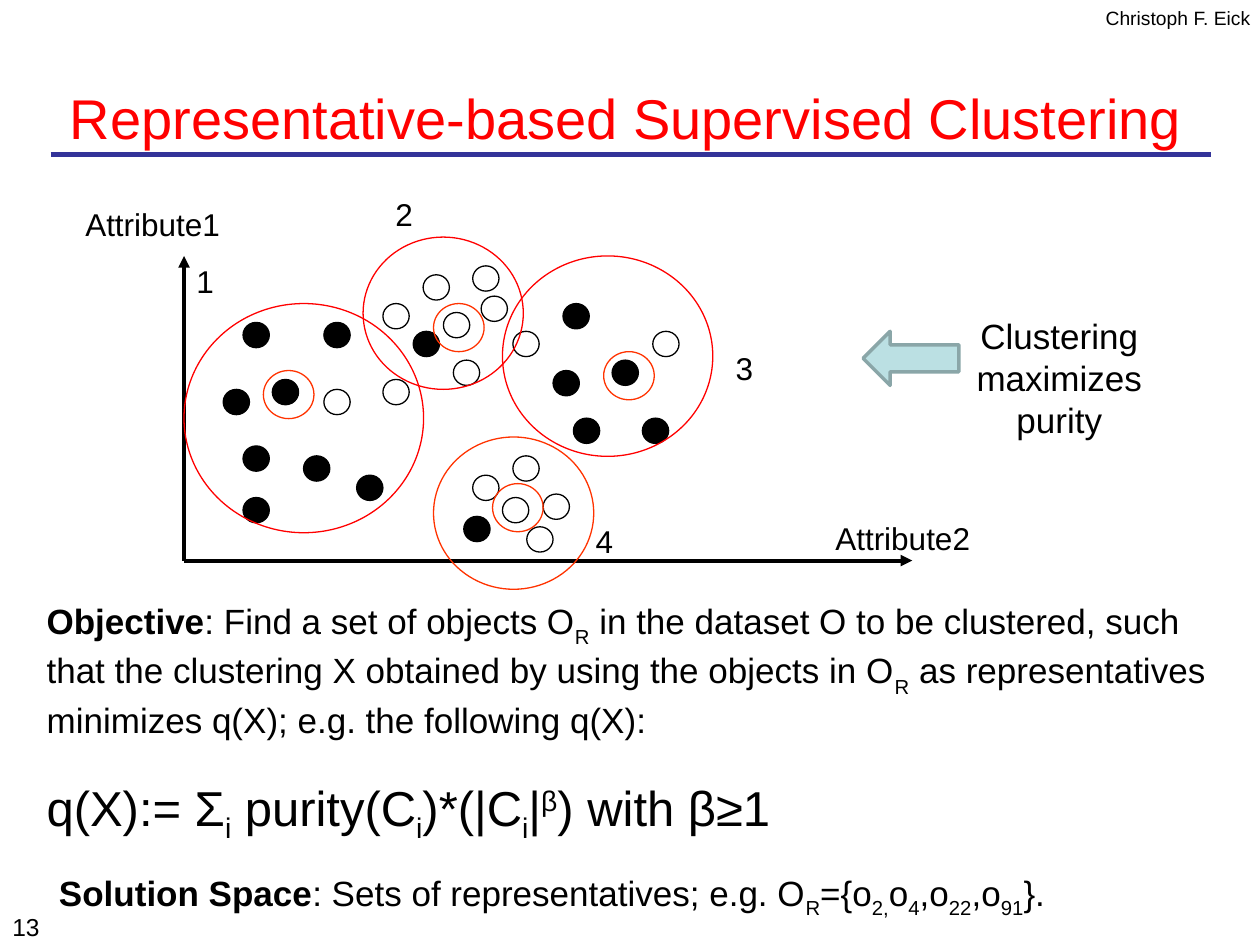
from pptx import Presentation
from pptx.dml.color import RGBColor
from pptx.enum.shapes import MSO_CONNECTOR as Connector, MSO_SHAPE as Shape
from pptx.enum.text import MSO_ANCHOR as Anchor, MSO_AUTO_SIZE as AutoSize, PP_ALIGN as Align
from pptx.oxml.ns import qn
from pptx.util import Cm, Pt
from lxml.etree import SubElement

FONT = "Arial"
BLACK, RED, ORANGE = "000000", "FF0000", "FF3300"
SUB, SUP = -25, 30
DOT_SIZE = (0.53, 0.51)
RING_SIZE = (1.02, 0.97)

# Left and top of every data object, in centimetres, by fill
DOTS = {
    BLACK: [(4.9, 6.5), (5.49, 7.65), (4.9, 8.99), (6.53, 6.5), (6.12, 9.19),
            (11.56, 8.43), (12.34, 7.26), (11.15, 7.47), (12.95, 8.43),
            (11.35, 6.12), (8.33, 6.68), (7.19, 9.58), (4.9, 10.03),
            (4.5, 7.85), (9.35, 10.41)],
    None: [(7.72, 7.65), (6.53, 7.85), (10.34, 6.68), (10.34, 9.19),
           (13.16, 6.68), (8.53, 5.54), (8.94, 6.3), (9.53, 5.36),
           (9.14, 7.26), (9.53, 9.58), (9.7, 5.97), (10.95, 9.96),
           (7.72, 6.12), (10.62, 10.62)],
    "FFFFFF": [(10.13, 10.03)],
}
CLUSTERS = [(10.13, 5.16, 4.24, 4.04, RED), (3.71, 6.12, 4.83, 4.62, RED),
            (7.32, 4.78, 3.23, 3.07, RED), (8.74, 8.81, 3.23, 3.07, ORANGE)]
REPRESENTATIVES = [(9.93, 9.75), (5.31, 7.47), (8.74, 6.12), (12.17, 7.09)]
LABELS = [("Attribute2", 16.59, 10.34), ("Attribute1", 1.47, 4.01),
          ("1", 3.71, 5.16), ("2", 7.72, 3.81), ("3", 14.58, 6.91), ("4", 11.76, 10.39)]

# Each span is its text and its baseline shift in percent
OBJECTIVE = [(": Find a set of objects O", 0), ("R", -30),
             (" in the dataset O to be clustered, such that the clustering X"
              " obtained by using the objects in O", 0), ("R", -30),
             (" as representatives minimizes q(X); e.g. the following q(X):", 0)]
FORMULA = [("q(X):= Σ", 0), ("i", SUB), (" purity(C", 0), ("i", SUB), (")*(|C", 0),
           ("i", SUB), ("|", 0), ("β", SUP), (") with β≥1", 0)]
SOLUTION = [(": Sets of representatives; e.g. O", 0), ("R", SUB), ("={o", 0),
            ("2,", SUB), ("o", 0), ("4", SUB), (",o", 0), ("22", SUB), (",o", 0),
            ("91", SUB), ("}.", 0)]


def color(value):
    return RGBColor.from_string(value)


def style_font(font, size, value=BLACK):
    font.name, font.size = FONT, Pt(size)
    font.color.rgb = color(value)


def add_box(slide, left, top, width, height, wrap=True):
    box = slide.shapes.add_textbox(Cm(left), Cm(top), Cm(width), Cm(height))
    box.text_frame.word_wrap = wrap
    box.text_frame.auto_size = AutoSize.SHAPE_TO_FIT_TEXT
    return box.text_frame


def add_text(slide, text, bounds, size, align=Align.LEFT, wrap=True):
    frame = add_box(slide, *bounds, wrap)
    frame.text = text
    for para in frame.paragraphs:
        para.alignment = align
        for run in para.runs:
            style_font(run.font, size)


def fill_spans(para, spans, size, heading=None):
    """Write spans with raised or lowered baselines after an optional bold heading."""
    if heading:
        run = para.add_run()
        run.text = heading
        style_font(run.font, size)
        run.font.bold = True
    for text, baseline in spans:
        run = para.add_run()
        run.text = text
        style_font(run.font, size)
        if baseline:
            run.font._element.set("baseline", str(baseline * 1000))


def add_figure(slide, kind, bounds, line, fill=None, width=0.75):
    figure = slide.shapes.add_shape(kind, *map(Cm, bounds))
    figure.shadow.inherit = False
    if fill:
        figure.fill.solid()
        figure.fill.fore_color.rgb = color(fill)
    else:
        figure.fill.background()
    figure.line.color.rgb = color(line)
    figure.line.width = Pt(width)


def add_line(slide, start, end, value, width, arrow=False):
    line = slide.shapes.add_connector(Connector.STRAIGHT, *map(Cm, start + end))
    line.line.color.rgb = color(value)
    line.line.width = Pt(width)
    if arrow:
        SubElement(line.line._get_or_add_ln(), qn("a:tailEnd"), type="triangle")
    SubElement(line._element.spPr, qn("a:effectLst"))


def set_title(slide, text):
    title = slide.shapes.title
    title.left, title.top, title.width, title.height = map(Cm, (-0.1, 1.52, 25.45, 1.7))
    frame = title.text_frame
    frame.text = text
    frame.auto_size = AutoSize.NONE
    frame.vertical_anchor = Anchor.MIDDLE
    para = frame.paragraphs[0]
    para.alignment = Align.CENTER
    style_font(para.runs[0].font, 32, RED)


def draw_clusters(slide):
    origin = (3.71, 11.3)
    for end in ((3.71, 5.16), (18.39, 11.3)):
        add_line(slide, origin, end, BLACK, 2.25, arrow=True)
    for fill, places in DOTS.items():
        for place in places:
            add_figure(slide, Shape.OVAL, place + DOT_SIZE, BLACK, fill)
    for *bounds, line in CLUSTERS:
        add_figure(slide, Shape.OVAL, bounds, line)
    for place in REPRESENTATIVES:
        add_figure(slide, Shape.OVAL, place + RING_SIZE, ORANGE)
    for text, left, top in LABELS:
        add_text(slide, text, (left, top, 3.43, 0.91), 18)


def main():
    deck = Presentation()
    deck.slide_width, deck.slide_height = Cm(25.4), Cm(19.05)
    slide = deck.slides.add_slide(deck.slide_layouts[5])

    add_line(slide, (1.02, 3.12), (24.41, 3.12), "333399", 3)
    add_text(slide, "Christoph F. Eick", (22, 0, 3.5, 0.74), 11, Align.CENTER, wrap=False)
    set_title(slide, "Representative-based Supervised Clustering")
    draw_clusters(slide)
    add_text(slide, "Clustering\nmaximizes\npurity", (19.41, 6.22, 3.89, 2.57), 20,
             Align.CENTER, wrap=False)
    add_figure(slide, Shape.LEFT_ARROW, (17.4, 6.68, 1.93, 1.09), "8AA6A8", "BBE0E3", 2)

    objective = add_box(slide, 0.69, 11.96, 24.56, 4.78)
    fill_spans(objective.paragraphs[0], OBJECTIVE, 20, "Objective")
    formula = objective.add_paragraph()
    formula.space_before = Pt(21)
    fill_spans(formula, FORMULA, 28)

    solution = add_box(slide, 0.94, 17.45, 23.55, 1.12)
    fill_spans(solution.paragraphs[0], SOLUTION, 20, "Solution Space")
    add_text(slide, "13", (0, 18.26, 2.49, 0.79), 14)
    deck.save("out.pptx")


if __name__ == "__main__":
    main()
